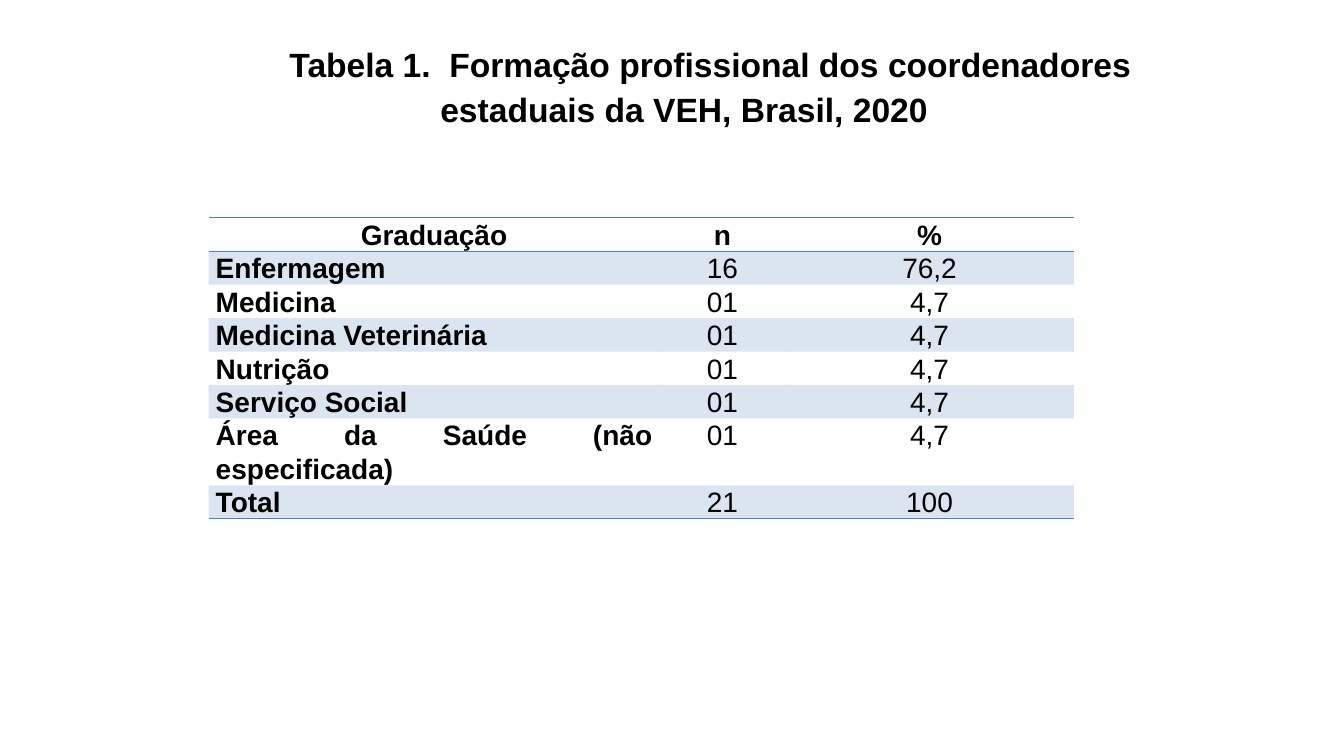
from dataclasses import dataclass

from lxml import etree
from pptx import Presentation
from pptx.dml.color import RGBColor
from pptx.enum import text
from pptx.oxml import ns
from pptx.util import Inches, Pt

BLACK = RGBColor(0x00, 0x00, 0x00)
BLUE = RGBColor(0x4F, 0x81, 0xBD)
FONT = "Arial"
TITLE = "Tabela 1.  Formação profissional dos coordenadores estaduais da VEH, Brasil, 2020"
PLAIN_TABLE_STYLE = "{2D5ABB26-0587-4C30-8999-92F81FD0307C}"
COLUMN_WIDTHS = (4.47, 1.25, 2.86)
LINE_HEIGHT = 0.33


@dataclass(frozen=True)
class TableRow:
    degree: str
    count: str
    percent: str
    lines: int = 1


ROWS = (
    TableRow("Graduação", "n", "%"),
    TableRow("Enfermagem", "16", "76,2"),
    TableRow("Medicina", "01", "4,7"),
    TableRow("Medicina Veterinária", "01", "4,7"),
    TableRow("Nutrição", "01", "4,7"),
    TableRow("Serviço Social", "01", "4,7"),
    TableRow("Área da Saúde (não especificada)", "01", "4,7", lines=2),
    TableRow("Total", "21", "100"),
)


def format_paragraph(para, size: int, bold: bool, align, spacing: float) -> None:
    para.alignment = align
    para.line_spacing = spacing
    para.font.name = FONT
    para.font.size = Pt(size)
    para.font.bold = bold
    para.font.color.rgb = BLACK


def add_border(cell, side: str) -> None:
    """Draw a one-point blue line; call before the cell is filled."""
    line = etree.SubElement(cell._tc.get_or_add_tcPr(), ns.qn(f"a:{side}"), w=str(Pt(1)))
    fill = etree.SubElement(line, ns.qn("a:solidFill"))
    etree.SubElement(fill, ns.qn("a:srgbClr"), val=str(BLUE))


def fill_cell(cell, shaded: bool) -> None:
    if not shaded:
        cell.fill.background()
        return
    cell.fill.solid()
    cell.fill.fore_color.rgb = BLUE
    color = cell._tc.tcPr.find(f"{ns.qn('a:solidFill')}/{ns.qn('a:srgbClr')}")
    etree.SubElement(color, ns.qn("a:alpha"), val="20000")


def add_title(page) -> None:
    title = page.shapes.title
    title.left, title.top = Inches(1.9), Inches(0.35)
    title.width, title.height = Inches(9.77), Inches(1)
    frame = title.text_frame
    frame.text = TITLE
    frame.word_wrap = True
    frame.auto_size = text.MSO_AUTO_SIZE.NONE
    frame.vertical_anchor = text.MSO_ANCHOR.TOP
    para = frame.paragraphs[0]
    format_paragraph(para, 24, True, text.PP_ALIGN.CENTER, 1.1)
    para.space_before = Pt(0)
    properties = para._p.get_or_add_pPr()
    properties.set("marL", "0")
    properties.set("indent", str(Inches(0.52)))


def add_degree_table(page) -> None:
    height = LINE_HEIGHT * sum(row.lines for row in ROWS)
    frame = page.shapes.add_table(
        len(ROWS), len(COLUMN_WIDTHS), Inches(2.07), Inches(2.16),
        Inches(sum(COLUMN_WIDTHS)), Inches(height))
    table = frame.table
    table.first_row = table.horz_banding = False
    table._tbl.tblPr.find(ns.qn("a:tableStyleId")).text = PLAIN_TABLE_STYLE
    for column, width in zip(table.columns, COLUMN_WIDTHS):
        column.width = Inches(width)

    for row_index, row in enumerate(ROWS):
        table.rows[row_index].height = Inches(LINE_HEIGHT * row.lines)
        is_header = row_index == 0
        for column_index, value in enumerate((row.degree, row.count, row.percent)):
            cell = table.cell(row_index, column_index)
            cell.margin_left = cell.margin_right = Inches(0.07)
            cell.margin_top = cell.margin_bottom = 0
            cell.text = value
            is_label = column_index == 0
            align = (text.PP_ALIGN.JUSTIFY if is_label and not is_header
                     else text.PP_ALIGN.CENTER)
            format_paragraph(cell.text_frame.paragraphs[0], 20,
                             is_header or is_label, align, 1.07)
            if is_header:
                add_border(cell, "lnT")
            if is_header or row_index == len(ROWS) - 1:
                add_border(cell, "lnB")
            fill_cell(cell, shaded=row_index % 2 == 1)


def main() -> None:
    deck = Presentation()
    deck.slide_width, deck.slide_height = Inches(13.33), Inches(7.5)
    page = deck.slides.add_slide(deck.slide_layouts.get_by_name("Title Only"))
    add_title(page)
    add_degree_table(page)
    deck.save("out.pptx")


if __name__ == "__main__":
    main()
